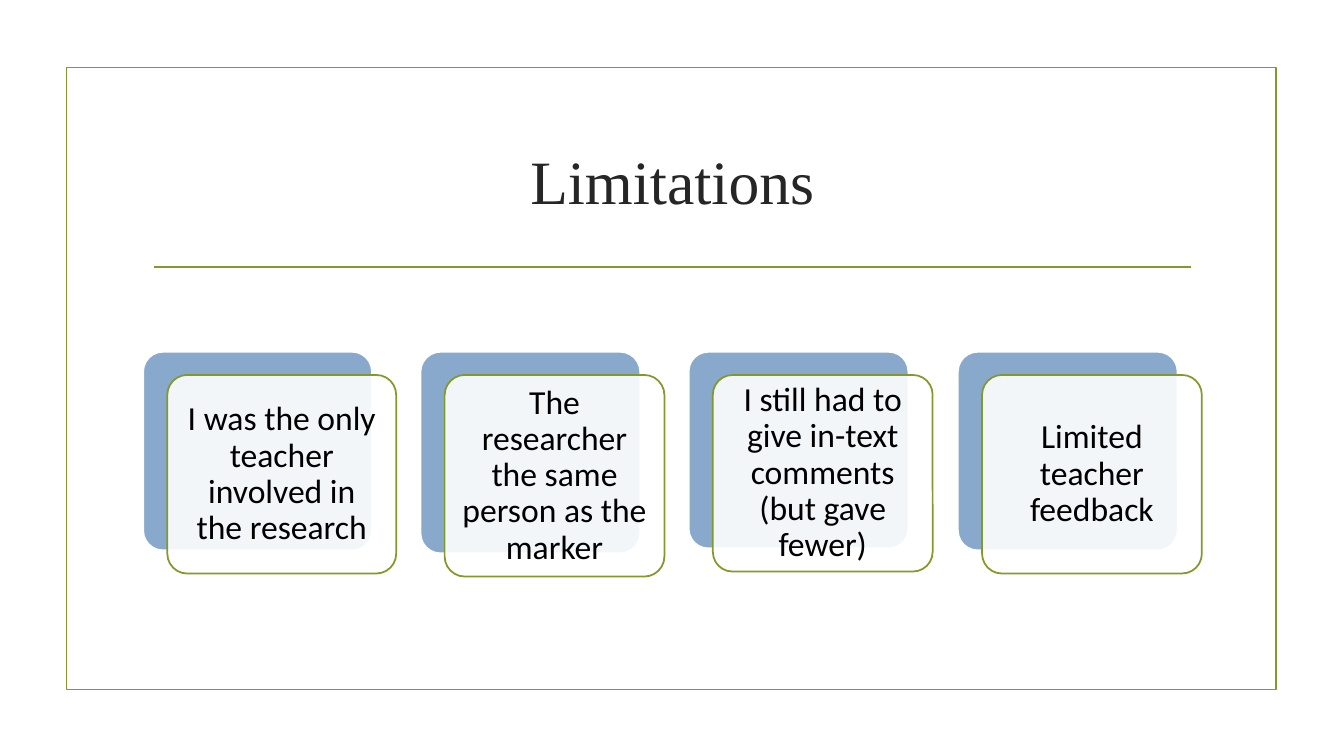
from lxml.etree import SubElement
from pptx import Presentation
from pptx.dml.color import RGBColor
from pptx.enum.shapes import MSO_CONNECTOR, MSO_SHAPE
from pptx.enum.text import MSO_ANCHOR, PP_ALIGN
from pptx.oxml.ns import qn
from pptx.util import Inches, Pt

GREEN = RGBColor(0x83, 0x99, 0x2A)
BLUE = RGBColor(0x88, 0xA9, 0xCB)
WHITE = RGBColor(0xFF, 0xFF, 0xFF)
BLACK = RGBColor(0, 0, 0)
DARK = RGBColor(0x26, 0x26, 0x26)

SHIFT = 0.24, 0.23  # offset of each card from its backing
CARDS = [  # left, width, height, text
    (1.42, 2.27, 1.97, "I was the only teacher involved in the research"),
    (4.17, 2.18, 2.0, "The researcher the same person as the marker"),
    (6.83, 2.18, 1.95, "I still had to give in-text comments (but gave fewer)"),
    (9.5, 2.18, 1.97, "Limited teacher feedback"),
]


def add_box(slide, kind, box, fill, edge):
    shape = slide.shapes.add_shape(kind, *map(Inches, box))
    shape.shadow.inherit = False
    if fill is None:
        shape.fill.background()
    else:
        shape.fill.solid()
        shape.fill.fore_color.rgb = fill
    shape.line.color.rgb = edge
    shape.line.width = Pt(1.25)
    return shape


def add_frame(slide, left, top, width, height):
    """Draw the border and the rule beneath the title."""
    add_box(slide, MSO_SHAPE.RECTANGLE, (left, top, width, height), None, GREEN)
    y = Inches(top + 1.98)
    rule = slide.shapes.add_connector(
        MSO_CONNECTOR.STRAIGHT, Inches(left + 0.87), y, Inches(left + width - 0.85), y)
    rule.line.color.rgb = GREEN
    rule.line.width = Pt(1.25)
    SubElement(rule._element.spPr, qn("a:effectLst"))


def set_title(slide, text, left, top, width, height):
    title = slide.shapes.title
    title.left, title.top = Inches(left), Inches(top)
    title.width, title.height = Inches(width), Inches(height)
    frame = title.text_frame
    frame.text = text
    frame.vertical_anchor = MSO_ANCHOR.MIDDLE
    para = frame.paragraphs[0]
    para.alignment = PP_ALIGN.CENTER
    para.font.name = "Times New Roman"
    para.font.size = Pt(44)
    para.font.color.rgb = DARK


def add_card(slide, text, left, top, width, height):
    """Draw a blue backing and a translucent text card shifted from it."""
    dx, dy = SHIFT
    back = add_box(slide, MSO_SHAPE.ROUNDED_RECTANGLE,
                   (left, top, width, height), BLUE, WHITE)
    card = add_box(slide, MSO_SHAPE.ROUNDED_RECTANGLE,
                   (left + dx, top + dy, width, height), WHITE, GREEN)
    for shape in (back, card):
        shape.adjustments[0] = 0.1
    color = card._element.spPr.find(qn("a:solidFill"))[0]
    SubElement(color, qn("a:alpha"), val="90000")

    frame = card.text_frame
    frame.word_wrap = True
    frame.vertical_anchor = MSO_ANCHOR.MIDDLE
    frame.margin_left = frame.margin_right = Inches(0.1)
    frame.margin_top = frame.margin_bottom = Inches(0.1)
    frame.text = text
    para = frame.paragraphs[0]
    para.alignment = PP_ALIGN.CENTER
    para.line_spacing = 0.9
    para.font.name = "Calibri"
    para.font.size = Pt(24)
    para.font.color.rgb = BLACK


def main():
    deck = Presentation()
    deck.slide_width, deck.slide_height = Inches(13.33), Inches(7.5)
    slide = deck.slides.add_slide(deck.slide_layouts[5])
    add_frame(slide, 0.66, 0.67, 12, 6.17)
    set_title(slide, "Limitations", 1.42, 1.07, 10.5, 1.43)
    for left, width, height, text in CARDS:
        add_card(slide, text, left, 3.49, width, height)
    deck.save("out.pptx")


if __name__ == "__main__":
    main()
